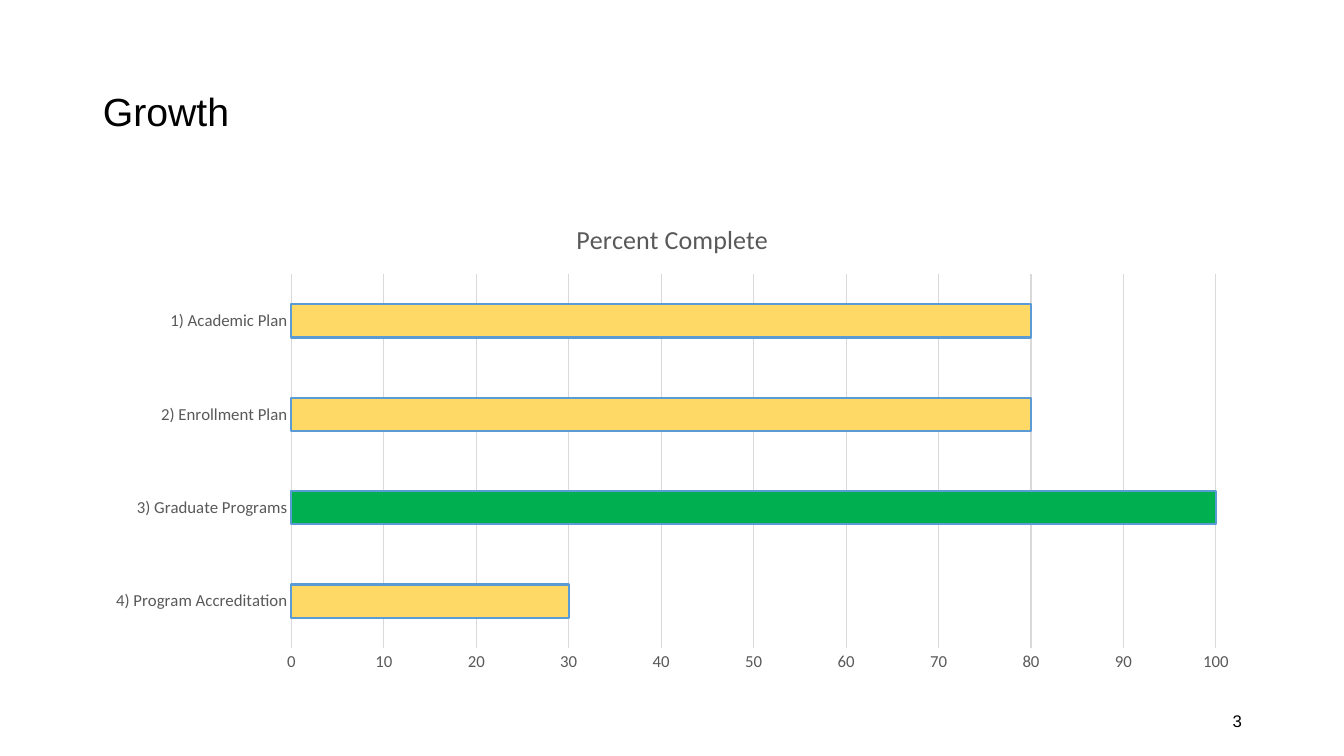
"""Build the Growth slide with its percent-complete bar chart."""
from pptx import Presentation
from pptx.chart.data import CategoryChartData
from pptx.dml.color import RGBColor
from pptx.enum.chart import XL_CHART_TYPE, XL_TICK_MARK
from pptx.enum.text import MSO_ANCHOR, PP_ALIGN
from pptx.util import Cm, Pt

BAR = XL_CHART_TYPE.BAR_CLUSTERED
NO_TICK = XL_TICK_MARK.NONE
MIDDLE = MSO_ANCHOR.MIDDLE
LEFT, RIGHT = PP_ALIGN.LEFT, PP_ALIGN.RIGHT

TITLE = "Growth"
CHART_TITLE = "Percent Complete"
PAGE = "3"
PLANS = [
    ("4) Program Accreditation", 30),
    ("3) Graduate Programs", 100),
    ("2) Enrollment Plan", 80),
    ("1) Academic Plan", 80),
]
COMPLETE = 100
BLACK, GREY, GRID = "000000", "595959", "D9D9D9"
YELLOW, GREEN, BLUE = "FFD966", "00B050", "5B9BD5"
MARGIN, WIDTH = 2.34, 29.21


def color(value):
    return RGBColor.from_string(value)


def set_font(font, name, size, value):
    font.name, font.size, font.bold = name, Pt(size), False
    font.color.rgb = color(value)


def set_line(line, value, width):
    line.color.rgb = color(value)
    line.width = Pt(width)


def set_bar(fmt, value):
    fmt.fill.solid()
    fmt.fill.fore_color.rgb = color(value)
    set_line(fmt.line, BLUE, 1.5)


def write(sp, text, size, align):
    tf = sp.text_frame
    tf.word_wrap = True
    tf.vertical_anchor = MIDDLE
    p = tf.paragraphs[0]
    p.text, p.alignment = text, align
    set_font(p.font, "Arial", size, BLACK)
    return p


def add_progress_chart(s):
    data = CategoryChartData()
    data.categories = [name for name, _ in PLANS]
    data.add_series("Series 1", [value for _, value in PLANS])
    chart = s.shapes.add_chart(BAR, Cm(MARGIN), Cm(5.08), Cm(WIDTH), Cm(12.09), data).chart
    set_font(chart.font, "Calibri", 10, BLACK)
    chart.has_legend = False
    chart.has_title = True
    p = chart.chart_title.text_frame.paragraphs[0]
    p.text = CHART_TITLE
    set_font(p.font, "Calibri", 18.6, GREY)

    cat, val = chart.category_axis, chart.value_axis
    for axis in (cat, val):
        axis.major_tick_mark = axis.minor_tick_mark = NO_TICK
        set_font(axis.tick_labels.font, "Calibri", 12, GREY)
    set_line(cat.format.line, GRID, 0.75)
    val.format.line.fill.background()
    val.minimum_scale, val.maximum_scale, val.major_unit = 0, COMPLETE, 10
    val.has_major_gridlines = True
    set_line(val.major_gridlines.format.line, GRID, 0.75)

    plot = chart.plots[0]
    plot.gap_width = 182
    plot.vary_by_categories = False
    series = plot.series[0]
    set_bar(series.format, YELLOW)
    for i, (_, value) in enumerate(PLANS):
        if value == COMPLETE:
            set_bar(series.points[i].format, GREEN)


def main():
    prs = Presentation()
    prs.slide_width, prs.slide_height = Cm(33.87), Cm(19.05)
    s = prs.slides.add_slide(prs.slide_layouts[5])
    title = s.shapes.title
    title.left, title.top, title.width, title.height = Cm(MARGIN), Cm(1.02), Cm(WIDTH), Cm(3.68)
    write(title, TITLE, 28, LEFT).line_spacing = 0.9
    add_progress_chart(s)
    page = s.shapes.add_textbox(Cm(MARGIN + WIDTH - 7.62), Cm(17.65), Cm(7.62), Cm(1.02))
    write(page, PAGE, 12, RIGHT)
    prs.save("out.pptx")


if __name__ == "__main__":
    main()
